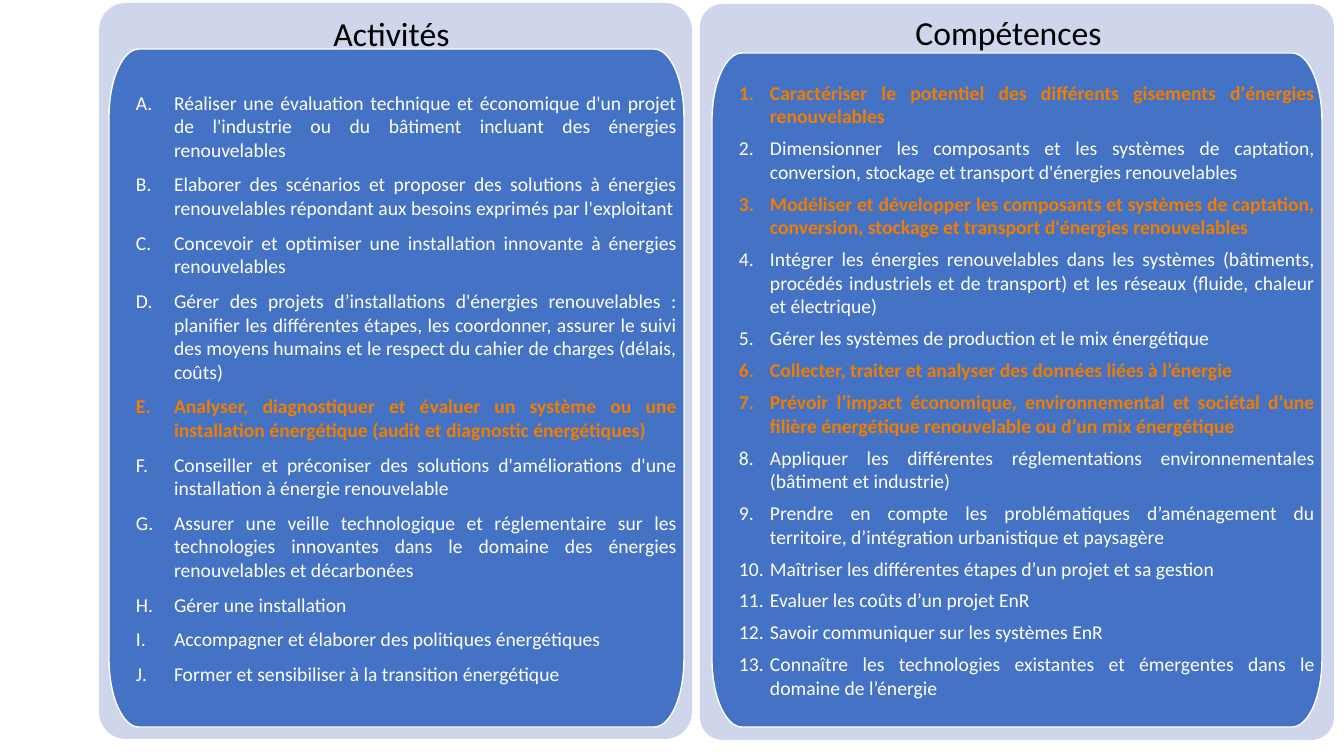
import pptx
import pptx.dml.color
import pptx.enum.shapes
import pptx.enum.text
import pptx.oxml.ns
import pptx.util
from lxml import etree

RGB = pptx.dml.color.RGBColor
ALIGN = pptx.enum.text.PP_ALIGN
qn = pptx.oxml.ns.qn
SCALE = 12192000 / 1344  # EMU in one px

PALE = RGB(0xCF, 0xD5, 0xEA)
BLUE = RGB(0x44, 0x72, 0xC4)
WHITE = RGB(0xFF, 0xFF, 0xFF)
BLACK = RGB(0, 0, 0)
ORANGE = RGB(0xEF, 0x7D, 0x00)
FONT = "Calibri"
BEND = 0.55  # pull of a curve towards its corner

TASKS = [
    "Réaliser une évaluation technique et économique d'un projet de l'industrie ou du bâtiment incluant des énergies renouvelables",
    "Elaborer des scénarios et proposer des solutions à énergies renouvelables répondant aux besoins exprimés par l'exploitant",
    "Concevoir et optimiser une installation innovante à énergies renouvelables",
    "Gérer des projets d’installations d'énergies renouvelables : planifier les différentes étapes, les coordonner, assurer le suivi des moyens humains et le respect du cahier de charges (délais, coûts)",
    "Analyser, diagnostiquer et évaluer un système ou une installation énergétique (audit et diagnostic énergétiques)",
    "Conseiller et préconiser des solutions d'améliorations d'une installation à énergie renouvelable",
    "Assurer une veille technologique et réglementaire sur les technologies innovantes dans le domaine des énergies renouvelables et décarbonées",
    "Gérer une installation",
    "Accompagner et élaborer des politiques énergétiques",
    "Former et sensibiliser à la transition énergétique",
]
SKILLS = [
    "Caractériser le potentiel des différents gisements d'énergies renouvelables",
    "Dimensionner les composants et les systèmes de captation, conversion, stockage et transport d'énergies renouvelables",
    "Modéliser et développer les composants et systèmes de captation, conversion, stockage et transport d'énergies renouvelables",
    "Intégrer les énergies renouvelables dans les systèmes (bâtiments, procédés industriels et de transport) et les réseaux (fluide, chaleur et électrique)",
    "Gérer les systèmes de production et le mix énergétique",
    "Collecter, traiter et analyser des données liées à l’énergie",
    "Prévoir l’impact économique, environnemental et sociétal d’une filière énergétique renouvelable ou d’un mix énergétique",
    "Appliquer les différentes réglementations environnementales (bâtiment et industrie)",
    "Prendre en compte les problématiques d’aménagement du territoire, d’intégration urbanistique et paysagère",
    "Maîtriser les différentes étapes d’un projet et sa gestion",
    "Evaluer les coûts d’un projet EnR",
    "Savoir communiquer sur les systèmes EnR",
    "Connaître les technologies existantes et émergentes dans le domaine de l’énergie",
]


def px(n):
    return pptx.util.Emu(round(n * SCALE))


def add_run(para, text, size, color, bold=False):
    run = para.add_run()
    run.text = text
    run.font.name = FONT
    run.font.size = pptx.util.Pt(size)
    run.font.bold = bold
    run.font.color.rgb = color


def set_frame(frame, side, edge):
    frame.word_wrap = True
    frame.vertical_anchor = pptx.enum.text.MSO_ANCHOR.MIDDLE
    frame.margin_left = frame.margin_right = px(side)
    frame.margin_top = frame.margin_bottom = px(edge)


def add_panel(slide, box, radius):
    kind = pptx.enum.shapes.MSO_SHAPE.ROUNDED_RECTANGLE
    panel = slide.shapes.add_shape(kind, *map(px, box))
    panel.adjustments[0] = radius / min(box[2:])
    panel.shadow.inherit = False
    panel.fill.solid()
    panel.fill.fore_color.rgb = PALE
    panel.line.fill.background()


def add_head(slide, box, text):
    frame = slide.shapes.add_textbox(*map(px, box)).text_frame
    set_frame(frame, 38, 0)
    para = frame.paragraphs[0]
    para.alignment = ALIGN.CENTER
    para.line_spacing = 0.9
    add_run(para, text, 24, BLACK)


def bend_corners(card):
    """Turn every other side, the cut corners, into a curve."""
    ends = list(card._element.iter(qn("a:pt")))
    spots = [(int(pt.get("x")), int(pt.get("y"))) for pt in ends]
    for i in range(1, len(ends), 2):
        (x1, y1), (x2, y2) = spots[i - 1], spots[i]
        cx, cy = (x1, y2) if i % 4 == 1 else (x2, y1)
        side = ends[i].getparent()
        curve = etree.Element(qn("a:cubicBezTo"))
        for x, y in ((x1, y1), (x2, y2)):
            pull = etree.SubElement(curve, qn("a:pt"))
            pull.set("x", str(round(x + BEND * (cx - x))))
            pull.set("y", str(round(y + BEND * (cy - y))))
        curve.append(ends[i])
        side.getparent().replace(side, curve)


def add_card(slide, box, rx=30, ry=68):
    left, top, wide, high = box
    right, base = left + wide, top + high
    points = [(left, top + ry), (left + rx, top),
              (right - rx, top), (right, top + ry),
              (right, base - ry), (right - rx, base),
              (left + rx, base), (left, base - ry)]
    points = [(px(x), px(y)) for x, y in points]
    path = slide.shapes.build_freeform(*points[0], scale=1.0)
    path.add_line_segments(points[1:], close=True)
    card = path.convert_to_shape()
    bend_corners(card)
    card.shadow.inherit = False
    card.fill.solid()
    card.fill.fore_color.rgb = BLUE
    card.line.color.rgb = WHITE
    card.line.width = pptx.util.Pt(1)
    return card


def add_list(card, items, marks, style, indent, hang, gap):
    frame = card.text_frame
    set_frame(frame, 7, 7)
    for i, text in enumerate(items):
        para = frame.add_paragraph() if i else frame.paragraphs[0]
        props = para._p.get_or_add_pPr()
        props.set("marL", str(px(indent)))
        props.set("indent", str(px(-hang)))
        num = etree.SubElement(props, qn("a:buAutoNum"))
        num.set("type", style)
        para.alignment = ALIGN.JUSTIFY
        para.space_after = pptx.util.Pt(gap)
        marked = i + 1 in marks
        add_run(para, text, 14, ORANGE if marked else WHITE, marked)


def main():
    deck = pptx.Presentation()
    deck.slide_width, deck.slide_height = px(1344), px(756)
    slide = deck.slides.add_slide(deck.slide_layouts[6])

    # Activities, lettered
    add_panel(slide, (99, 3, 593, 736), 27)
    add_head(slide, (101, 0, 581, 71), "Activités")
    card = add_card(slide, (109, 49, 575, 678))
    add_list(card, TASKS, {5}, "alphaUcPeriod", 58, 38, 8)

    # Skills, numbered
    add_panel(slide, (700, 4, 634, 736), 23)
    add_head(slide, (689, 4, 639, 61), "Compétences")
    card = add_card(slide, (712, 53, 610, 674))
    add_list(card, SKILLS, {1, 3, 6, 7}, "arabicPeriod", 51, 31, 6)

    deck.save("out.pptx")


if __name__ == "__main__":
    main()
